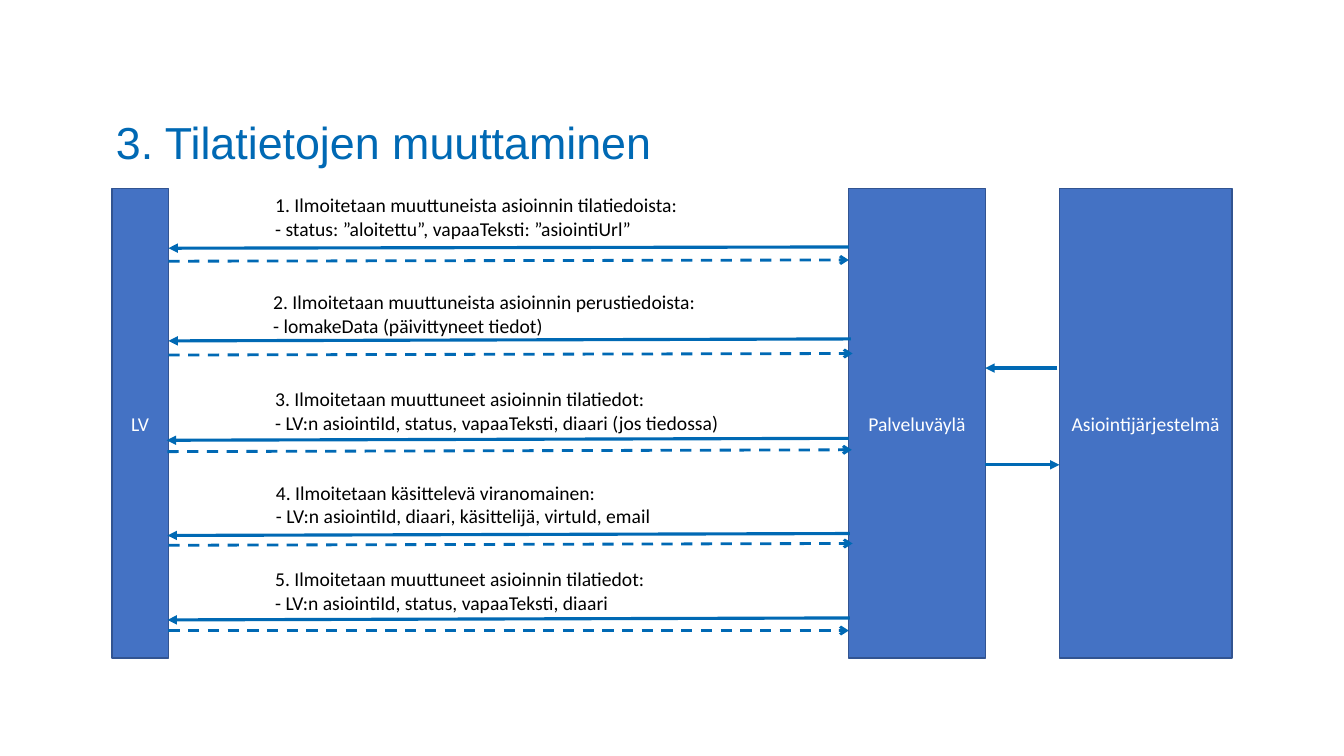
from lxml import etree
from pptx import Presentation
from pptx.dml.color import RGBColor
from pptx.enum.dml import MSO_LINE
from pptx.enum.shapes import MSO_CONNECTOR, MSO_SHAPE
from pptx.enum.text import MSO_ANCHOR, MSO_AUTO_SIZE, PP_ALIGN
from pptx.oxml.ns import qn
from pptx.util import Pt

BLUE = RGBColor(0x00, 0x69, 0xB4)
BAR_FILL = RGBColor(0x44, 0x72, 0xC4)
BAR_EDGE = RGBColor(0x32, 0x54, 0x91)
WHITE = RGBColor(0xFF, 0xFF, 0xFF)
BLACK = RGBColor(0x00, 0x00, 0x00)

RECTANGLE = MSO_SHAPE.RECTANGLE
STRAIGHT = MSO_CONNECTOR.STRAIGHT
DASH = MSO_LINE.DASH
MIDDLE, TOP = MSO_ANCHOR.MIDDLE, MSO_ANCHOR.TOP
LEFT, CENTER = PP_ALIGN.LEFT, PP_ALIGN.CENTER
NO_AUTOFIT = MSO_AUTO_SIZE.NONE
TITLE_ONLY = 5

# Sequence layout in points
BAR_TOP, BAR_HEIGHT = 134.6, 335.5
LV_LEFT, LV_WIDTH = 80, 40.3
BUS_LEFT, BUS_WIDTH = 606.3, 97.5
SYSTEM_LEFT, SYSTEM_WIDTH = 756.8, 123.2
BUS_RIGHT = BUS_LEFT + BUS_WIDTH

BARS = [
    (LV_LEFT, LV_WIDTH, "LV"),
    (BUS_LEFT, BUS_WIDTH, "Palveluväylä"),
    (SYSTEM_LEFT, SYSTEM_WIDTH, "Asiointijärjestelmä"),
]

# Label place, call and reply as (x, y) at the bus end and the LV end, lines
MESSAGES = [
    ((189.4, 134.6, 332.6), (606.3, 176.4), (120.3, 177.3), (606.3, 185.7), (120.3, 186.6),
     ["1. Ilmoitetaan muuttuneista asioinnin tilatiedoista:",
      "- status: ”aloitettu”, vapaaTeksti: ”asiointiUrl”"]),
    ((188, 203.6, 326), (607.7, 242.1), (120.3, 243.5), (609, 252.5), (120.3, 253.6),
     ["2. Ilmoitetaan muuttuneista asioinnin perustiedoista:",
      "- lomakeData (päivittyneet tiedot)"]),
    ((189.4, 272.9, 353.5), (606.3, 313.1), (119, 314.5), (608.4, 321.3), (119.6, 322.6),
     ["3. Ilmoitetaan muuttuneet asioinnin tilatiedot:",
      "- LV:n asiointiId, status, vapaaTeksti, diaari (jos tiedossa)"]),
    ((190, 339.8, 326), (607, 381.1), (119.6, 382.5), (609, 388.2), (120.3, 389.5),
     ["4. Ilmoitetaan käsittelevä viranomainen:",
      "- LV:n asiointiId, diaari, käsittelijä, virtuId, email"]),
    ((189.4, 401.5, 326), (607, 441.4), (119.6, 442.8), (606.3, 450.4), (120.3, 450.4),
     ["5. Ilmoitetaan muuttuneet asioinnin tilatiedot:",
      "- LV:n asiointiId, status, vapaaTeksti, diaari"]),
]


class SequencePage:
    """Holds the text and line style and draws on one slide."""

    body = {"name": "Calibri", "size": Pt(14), "bold": False}
    heading = {"name": "Arial", "size": Pt(32), "bold": False}

    def __init__(self, deck):
        self.page = deck.slides.add_slide(deck.slide_layouts[TITLE_ONLY])
        self.shapes = self.page.shapes

    def fill_text(self, box, lines, style, color, align, anchor):
        frame = box.text_frame
        frame.word_wrap = True
        frame.auto_size = NO_AUTOFIT
        frame.vertical_anchor = anchor
        frame.text = "\n".join(lines)
        for para in frame.paragraphs:
            para.alignment = align
            for span in para.runs:
                for name, value in style.items():
                    setattr(span.font, name, value)
                span.font.color.rgb = color

    def title(self, text, left, top, width, height):
        box = self.shapes.title
        place = {"left": left, "top": top, "width": width, "height": height}
        for name, value in place.items():
            setattr(box, name, Pt(value))
        box.fill.solid()
        box.fill.fore_color.rgb = WHITE
        self.fill_text(box, [text], self.heading, BLUE, LEFT, MIDDLE)
        box.text_frame.paragraphs[0].line_spacing = 0.9

    def bar(self, left, width, text):
        box = self.shapes.add_shape(
            RECTANGLE, Pt(left), Pt(BAR_TOP), Pt(width), Pt(BAR_HEIGHT))
        box.shadow.inherit = False
        box.fill.solid()
        box.fill.fore_color.rgb = BAR_FILL
        box.line.color.rgb = BAR_EDGE
        box.line.width = Pt(1)
        self.fill_text(box, [text], self.body, WHITE, CENTER, MIDDLE)

    def label(self, left, top, width, lines):
        box = self.shapes.add_textbox(Pt(left), Pt(top), Pt(width), Pt(41))
        self.fill_text(box, lines, self.body, BLACK, LEFT, TOP)

    def arrow(self, start, end, head="triangle", weight=2.25, dash=None):
        link = self.shapes.add_connector(
            STRAIGHT, *[Pt(value) for value in (*start, *end)])
        link.line.color.rgb = BLUE
        link.line.width = Pt(weight)
        if dash is not None:
            link.line.dash_style = dash
        properties = link._element.spPr
        outline = properties.find(qn("a:ln"))
        etree.SubElement(outline, qn("a:tailEnd"), type=head)
        etree.SubElement(properties, qn("a:effectLst"))


def main():
    deck = Presentation()
    deck.slide_width, deck.slide_height = Pt(960), Pt(540)
    sequence = SequencePage(deck)

    # Title and participants
    sequence.title("3. Tilatietojen muuttaminen", 75.6, 67, 720, 72.7)
    for bar in BARS:
        sequence.bar(*bar)

    # Calls to LV with dashed replies
    for place, call_from, call_to, reply_to, reply_from, lines in MESSAGES:
        sequence.arrow(call_from, call_to)
        sequence.label(*place, lines)
        sequence.arrow(reply_from, reply_to, head="arrow", weight=2, dash=DASH)

    # Traffic between the bus and the case system
    sequence.arrow((755.3, 262.9), (BUS_RIGHT, 262.9))
    sequence.arrow((BUS_RIGHT, 332), (SYSTEM_LEFT, 332))

    deck.save("out.pptx")


if __name__ == "__main__":
    main()
